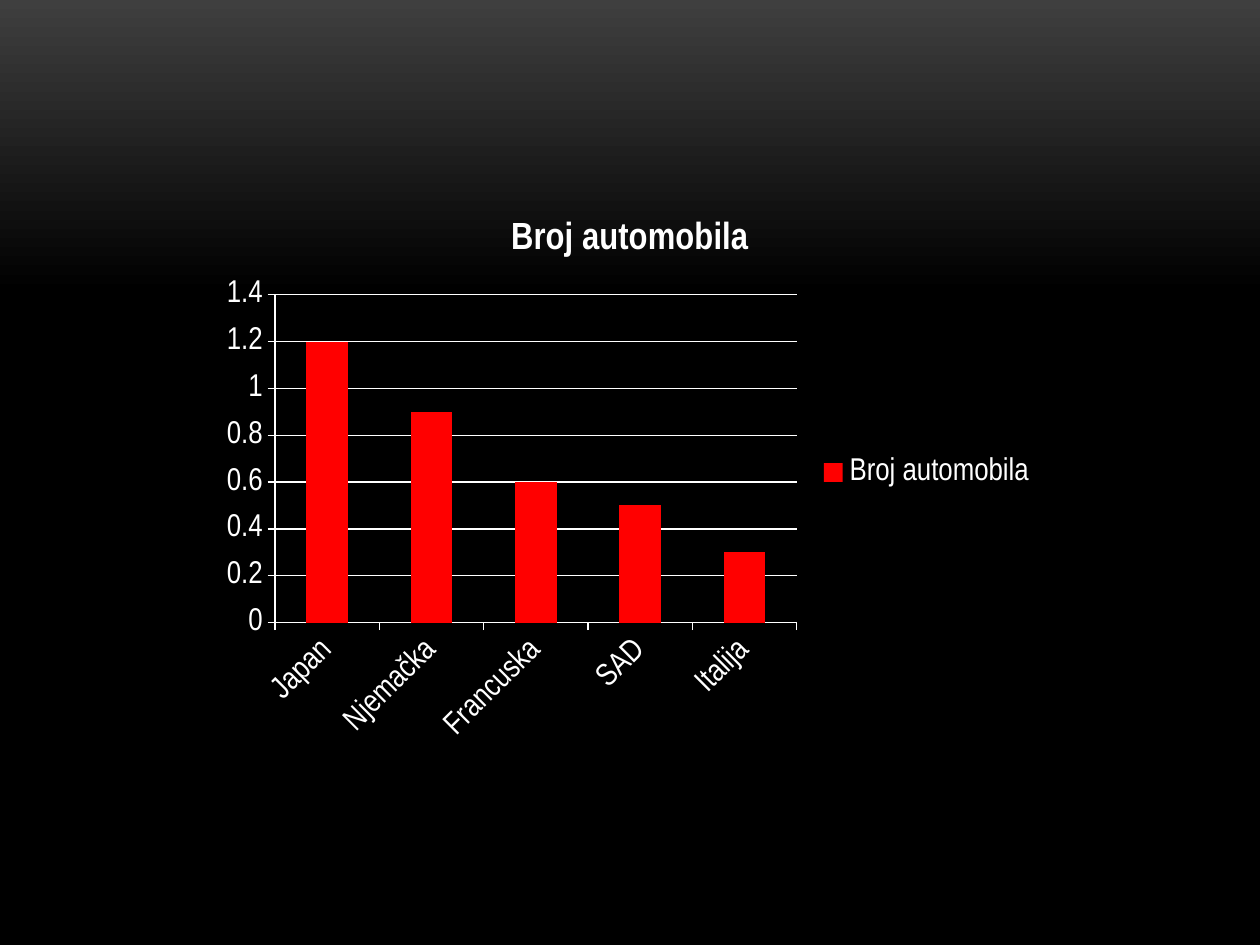
from copy import deepcopy
from typing import NamedTuple

from pptx import Presentation
from pptx.chart.data import CategoryChartData
from pptx.dml.color import RGBColor
from pptx.enum.chart import XL_CHART_TYPE as ChartType
from pptx.enum.chart import XL_LEGEND_POSITION as LegendPosition
from pptx.enum.chart import XL_TICK_MARK as TickMark
from pptx.oxml.ns import qn
from pptx.util import Emu, Pt

EMU_PER_PX = 914400 / 126
FONT = "Arial Narrow"
WHITE, RED, BLACK, GREY = "FFFFFF", "FF0000", "000000", "3F3F3F"
TITLE = "Broj automobila"


class CarCount(NamedTuple):
    country: str
    value: float


class GradientStop(NamedTuple):
    position: float
    color: str


CAR_COUNTS = [
    CarCount("Japan", 1.2),
    CarCount("Njemačka", 0.9),
    CarCount("Francuska", 0.6),
    CarCount("SAD", 0.5),
    CarCount("Italija", 0.3),
]
BACKGROUND = [GradientStop(0, GREY), GradientStop(0.31, BLACK), GradientStop(1, BLACK)]


def px(length: int) -> Emu:
    return Emu(round(length * EMU_PER_PX))


def rgb(color: str) -> RGBColor:
    return RGBColor.from_string(color)


def format_font(font, size: float = 18, bold: bool = False, color: str = WHITE) -> None:
    font.name, font.size, font.bold = FONT, Pt(size), bold
    font.color.rgb = rgb(color)


def write_text(text_frame, text: str, **font_format) -> None:
    paragraph = text_frame.paragraphs[0]
    run = paragraph.add_run()
    run.text = text
    format_font(paragraph.font, **font_format)
    format_font(run.font, **font_format)


def format_line(line, color: str = WHITE) -> None:
    line.color.rgb = rgb(color)
    line.width = Pt(0.75)


def paint_background(slide, stops: list[GradientStop]) -> None:
    fill = slide.background.fill
    fill.gradient()
    fill.gradient_angle = 270
    stop_list = next(slide.element.iter(qn("a:gsLst")))
    while len(stop_list) < len(stops):
        stop_list.append(deepcopy(stop_list[-1]))
    for gradient_stop, stop in zip(fill.gradient_stops, stops):
        gradient_stop.position = stop.position
        gradient_stop.color.rgb = rgb(stop.color)


def add_car_chart(slide, counts: list[CarCount]) -> None:
    data = CategoryChartData()
    data.categories = [count.country for count in counts]
    data.add_series(TITLE, [count.value for count in counts])
    chart = slide.shapes.add_chart(
        ChartType.COLUMN_CLUSTERED, px(210), px(193), px(840), px(559), data
    ).chart
    format_font(chart.font)

    # Title and legend
    chart.has_title = True
    write_text(chart.chart_title.text_frame, TITLE, size=21.6, bold=True)
    chart.chart_title.include_in_layout = False
    chart.has_legend = True
    chart.legend.position = LegendPosition.RIGHT
    chart.legend.include_in_layout = False
    format_font(chart.legend.font)

    # Columns
    plot = chart.plots[0]
    plot.gap_width = 150
    plot.vary_by_categories = False
    fill = plot.series[0].format.fill
    fill.solid()
    fill.fore_color.rgb = rgb(RED)

    # Axes
    for axis in (chart.category_axis, chart.value_axis):
        axis.major_tick_mark = TickMark.OUTSIDE
        axis.minor_tick_mark = TickMark.NONE
        format_font(axis.tick_labels.font)
        format_line(axis.format.line)
    labels = chart.category_axis._element.find(qn("c:txPr"))
    labels.find(qn("a:bodyPr")).set("rot", "-2700000")
    value_axis = chart.value_axis
    value_axis.minimum_scale, value_axis.maximum_scale = 0, 1.4
    value_axis.major_unit = 0.2
    value_axis.tick_labels.number_format = "General"
    value_axis.tick_labels.number_format_is_linked = False
    value_axis.has_major_gridlines = True
    format_line(value_axis.major_gridlines.format.line)


def main() -> None:
    presentation = Presentation()
    presentation.slide_width, presentation.slide_height = px(1260), px(945)
    slide = presentation.slides.add_slide(presentation.slide_layouts[6])
    paint_background(slide, BACKGROUND)
    add_car_chart(slide, CAR_COUNTS)
    presentation.save("out.pptx")


if __name__ == "__main__":
    main()
